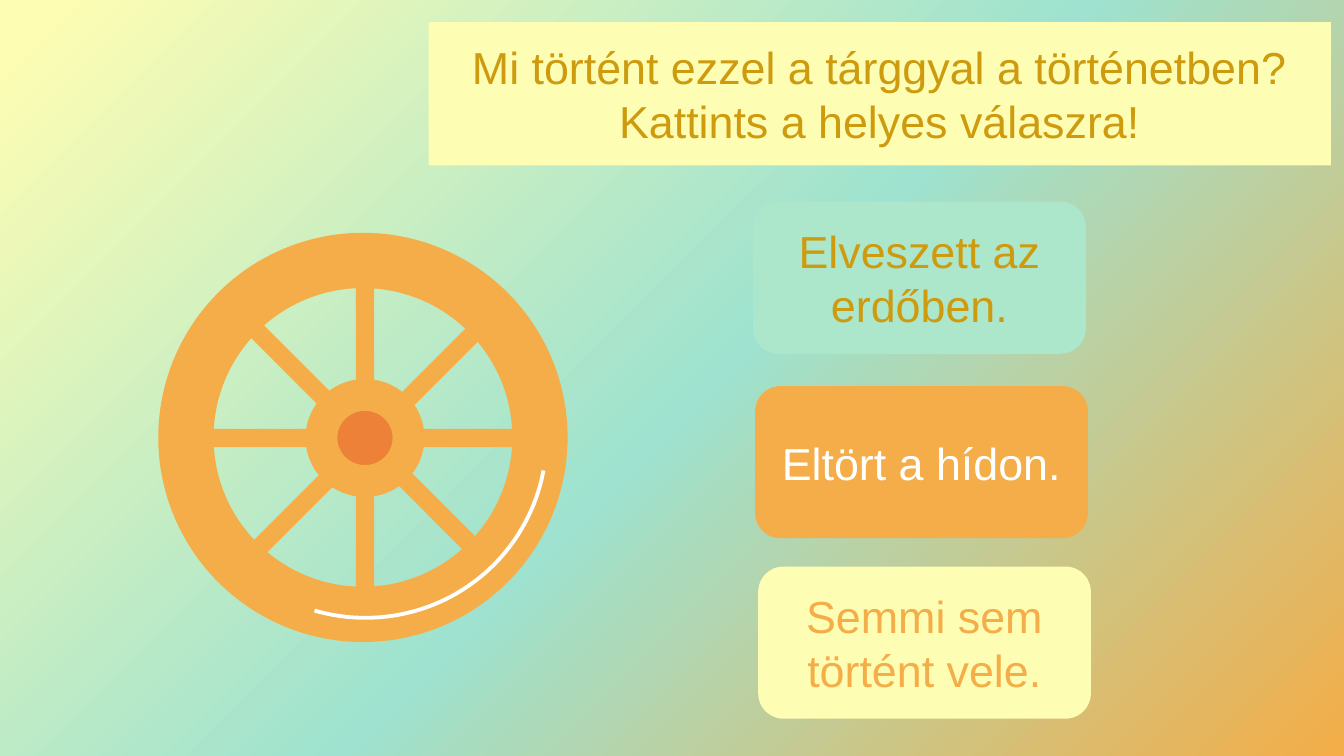
from lxml import etree
from pptx import Presentation
from pptx.dml.color import RGBColor
from pptx.enum.shapes import MSO_SHAPE as Preset
from pptx.enum.text import MSO_ANCHOR as Anchor, MSO_AUTO_SIZE as AutoSize, PP_ALIGN as Align
from pptx.oxml import parse_xml
from pptx.oxml.ns import nsdecls, qn
from pptx.util import Inches, Pt

COLORS = {
    "cream": "FDFDB3",
    "teal": "9EE2CF",
    "mint": "ACE6CB",
    "orange": "F4AD48",
    "hub": "ED8137",
    "gold": "CE9B0F",
    "white": "FFFFFF",
}
TITLE_ONLY = 5


def color(name):
    return RGBColor.from_string(COLORS[name])


def write_text(shape, text, ink, size=32, font="Arial"):
    frame = shape.text_frame
    frame.word_wrap = True
    frame.auto_size = AutoSize.NONE
    frame.vertical_anchor = Anchor.MIDDLE
    para = frame.paragraphs[0]
    para.alignment = Align.CENTER
    span = para.add_run()
    span.text = text
    span.font.name = font
    span.font.size = Pt(size)
    span.font.color.rgb = color(ink)


class QuizSlide:
    def __init__(self, deck):
        self.slide = deck.slides.add_slide(deck.slide_layouts[TITLE_ONLY])
        self.wheel = self.slide.shapes.add_group_shape()

    def background(self, stops):
        """Fill the background with a radial gradient centred on the top left corner."""
        fill = self.slide.background.fill
        fill.solid()
        solid = next(self.slide.element.iter(qn("a:solidFill")))
        marks = "".join(
            f'<a:gs pos="{percent * 1000}"><a:srgbClr val="{COLORS[name]}"/></a:gs>'
            for percent, name in stops
        )
        gradient = parse_xml(
            f'<a:gradFill {nsdecls("a")} rotWithShape="1"><a:gsLst>{marks}</a:gsLst>'
            '<a:path path="circle"><a:fillToRect r="100000" b="100000"/></a:path>'
            '<a:tileRect l="-100000" t="-100000"/></a:gradFill>'
        )
        solid.getparent().replace(solid, gradient)

    def title(self, text, left, top, width, height, fill, ink):
        box = self.slide.shapes.title
        box.left, box.top, box.width, box.height = map(Inches, (left, top, width, height))
        box.element.spPr.append(parse_xml(
            f'<a:prstGeom {nsdecls("a")} prst="roundRect"><a:avLst/></a:prstGeom>'
        ))
        box.fill.solid()
        box.fill.fore_color.rgb = color(fill)
        write_text(box, text, ink)

    def shape(self, shapes, preset, left, top, width, height, fill=None, adjust=(), turn=0):
        shape = shapes.add_shape(preset, *map(Inches, (left, top, width, height)))
        shape.shadow.inherit = False
        shape.line.fill.background()
        if fill:
            shape.fill.solid()
            shape.fill.fore_color.rgb = color(fill)
        else:
            shape.fill.background()
        for index, value in enumerate(adjust):
            shape.adjustments[index] = value
        shape.rotation = turn
        return shape

    def wheel_part(self, *args, **style):
        return self.shape(self.wheel.shapes, *args, **style)

    def spoke(self, left, top, length, turn):
        self.wheel_part(Preset.RECTANGLE, left, top, 0.18, length, fill="orange", turn=turn)

    def hub(self, left, top, size, opacity):
        hub = self.wheel_part(Preset.OVAL, left, top, size, size, fill="hub")
        tint = next(hub.element.spPr.iter(qn("a:srgbClr")))
        etree.SubElement(tint, qn("a:alpha")).set("val", str(opacity * 1000))

    def shine(self, left, top, width, height, start, end):
        """Draw a white arc between two angles in degrees, clockwise from the right."""
        arc = self.wheel_part(Preset.ARC, left, top, width, height,
                              adjust=(start * 0.6, end * 0.6))
        arc.line.color.rgb = color("white")
        arc.line.width = Pt(2.75)

    def answer(self, text, left, top, fill, ink):
        box = self.shape(self.slide.shapes, Preset.ROUNDED_RECTANGLE,
                         left, top, 3.3, 1.51, fill=fill)
        write_text(box, text, ink)


def main():
    deck = Presentation()
    deck.slide_width, deck.slide_height = Inches(13.33), Inches(7.5)
    page = QuizSlide(deck)
    page.background([(3, "cream"), (52, "teal"), (100, "orange")])
    page.title("Mi történt ezzel a tárggyal a történetben? Kattints a helyes válaszra!",
               4.25, 0.22, 8.95, 1.42, fill="cream", ink="gold")

    for left, top, length, turn in [
        (3.52, 2.7, 3.39, 45),
        (3.53, 2.55, 3.59, 0),
        (3.4, 2.43, 3.59, 315),
        (3.67, 2.54, 3.61, 90),
    ]:
        page.spoke(left, top, length, turn)
    page.wheel_part(Preset.DONUT, 1.57, 2.31, 4.06, 4.06, fill="orange", adjust=[0.135])
    page.hub(3.33, 4.06, 0.59, opacity=98)
    page.wheel_part(Preset.DONUT, 3.03, 3.76, 1.18, 1.17, fill="orange", adjust=[0.27])
    page.shine(1.83, 2.56, 3.59, 3.57, start=10.37, end=106.43)

    for text, left, top, fill, ink in [
        ("Elveszett az erdőben.", 7.47, 2, "mint", "gold"),
        ("Eltört a hídon.", 7.49, 3.83, "orange", "white"),
        ("Semmi sem történt vele.", 7.52, 5.62, "cream", "orange"),
    ]:
        page.answer(text, left, top, fill, ink)
    deck.save("out.pptx")


if __name__ == "__main__":
    main()
